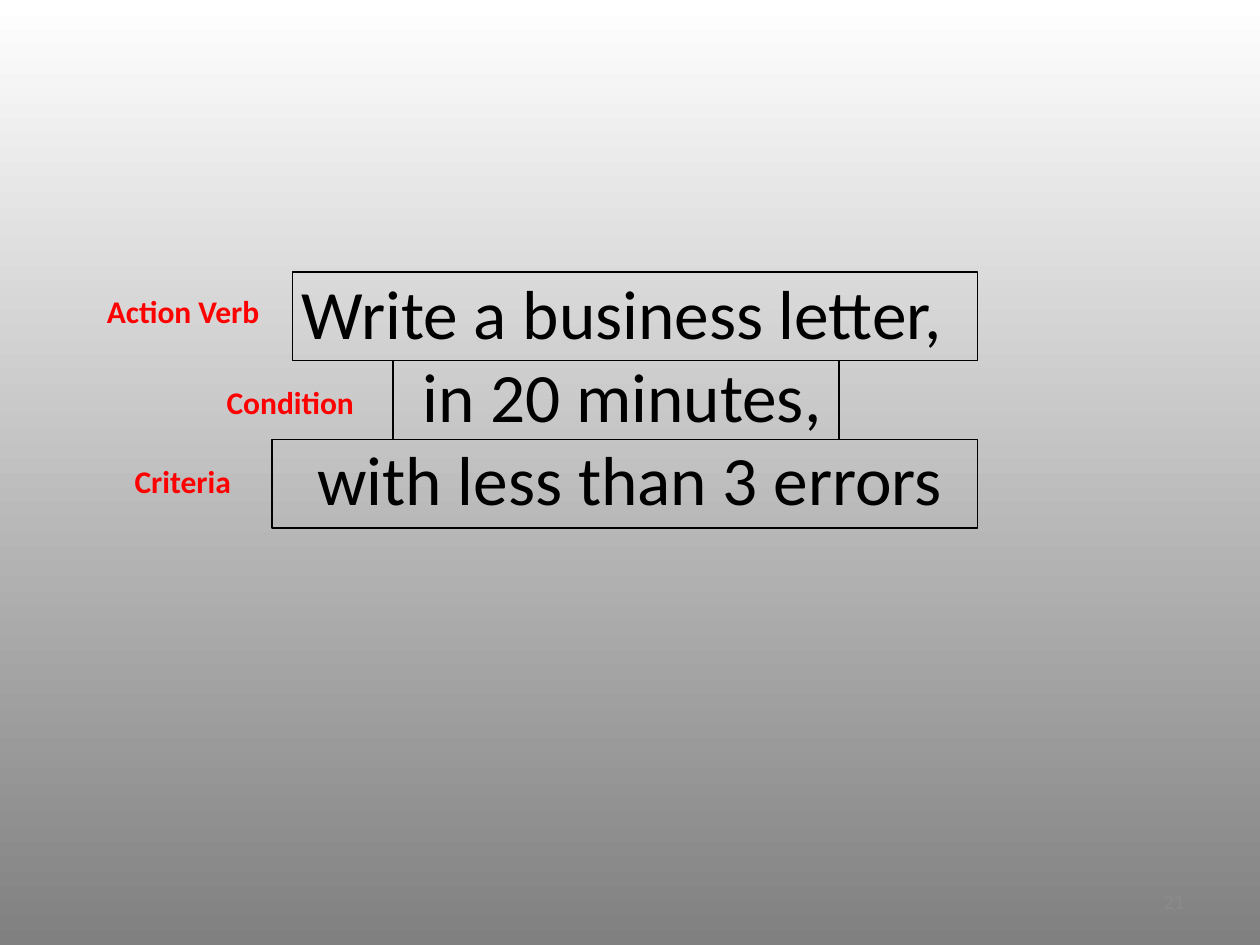
from pptx import Presentation
from pptx.dml.color import RGBColor
from pptx.enum.shapes import MSO_SHAPE
from pptx.enum.text import MSO_ANCHOR, PP_ALIGN
from pptx.util import Inches, Pt

RECT = MSO_SHAPE.RECTANGLE
TOP, MIDDLE = MSO_ANCHOR.TOP, MSO_ANCHOR.MIDDLE
LEFT, CENTER, RIGHT = PP_ALIGN.LEFT, PP_ALIGN.CENTER, PP_ALIGN.RIGHT

BLACK = RGBColor(0x00, 0x00, 0x00)
WHITE = RGBColor(0xFF, 0xFF, 0xFF)
RED = RGBColor(0xFF, 0x00, 0x00)
GREY = RGBColor(0x80, 0x80, 0x80)
PALE = RGBColor(0x8B, 0x8B, 0x8B)

GOAL = "Write a business letter, \vin 20 minutes, \vwith less than 3 errors"

# Label, its left, top and width, then the frame's left, top, width and height
PARTS = [
    ("Action Verb", (0.75, 2.27, 1.46), (2.32, 2.16, 5.44, 0.7)),
    ("Condition", (1.7, 2.99, 1.23), (3.12, 2.86, 3.54, 0.63)),
    ("Criteria", (0.97, 3.62, 1.07), (2.16, 3.49, 5.6, 0.7)),
]


def inches(box):
    return [Inches(n) for n in box]


def add_text(slide, box, text, size, color, align=LEFT, anchor=TOP, bold=False):
    frame = slide.shapes.add_textbox(*inches(box)).text_frame
    frame.word_wrap = True
    frame.vertical_anchor = anchor
    para = frame.paragraphs[0]
    para.text = text
    para.alignment = align
    font = para.font
    font.name, font.size, font.bold = "Calibri", Pt(size), bold
    font.color.rgb = color


def add_frame(slide, box):
    frame = slide.shapes.add_shape(RECT, *inches(box))
    frame.shadow.inherit = False
    frame.fill.background()
    frame.line.color.rgb = BLACK
    frame.line.width = Pt(0.75)


def paint_back(slide):
    fill = slide.background.fill
    fill.gradient()
    fill.gradient_angle = 90
    for stop, color in zip(fill.gradient_stops, (GREY, WHITE)):
        stop.color.rgb = color


def add_goal(slide, box):
    # Objective in three lines
    add_text(slide, box, GOAL, 39.6, BLACK, CENTER, MIDDLE)
    # Framed line and red label for each part
    for label, (left, top, width), frame in PARTS:
        add_frame(slide, frame)
        add_text(slide, (left, top, width, 0.4), label, 18, RED, bold=True)


def main():
    deck = Presentation()
    deck.slide_width, deck.slide_height = Inches(10), Inches(7.5)
    slide = deck.slides.add_slide(deck.slide_layouts[6])
    paint_back(slide)
    add_goal(slide, (0.75, 2.33, 8.5, 1.61))
    # Page number
    add_text(slide, (7.17, 6.95, 2.33, 0.4), "21", 12, PALE, RIGHT, MIDDLE)
    deck.save("out.pptx")


if __name__ == "__main__":
    main()
